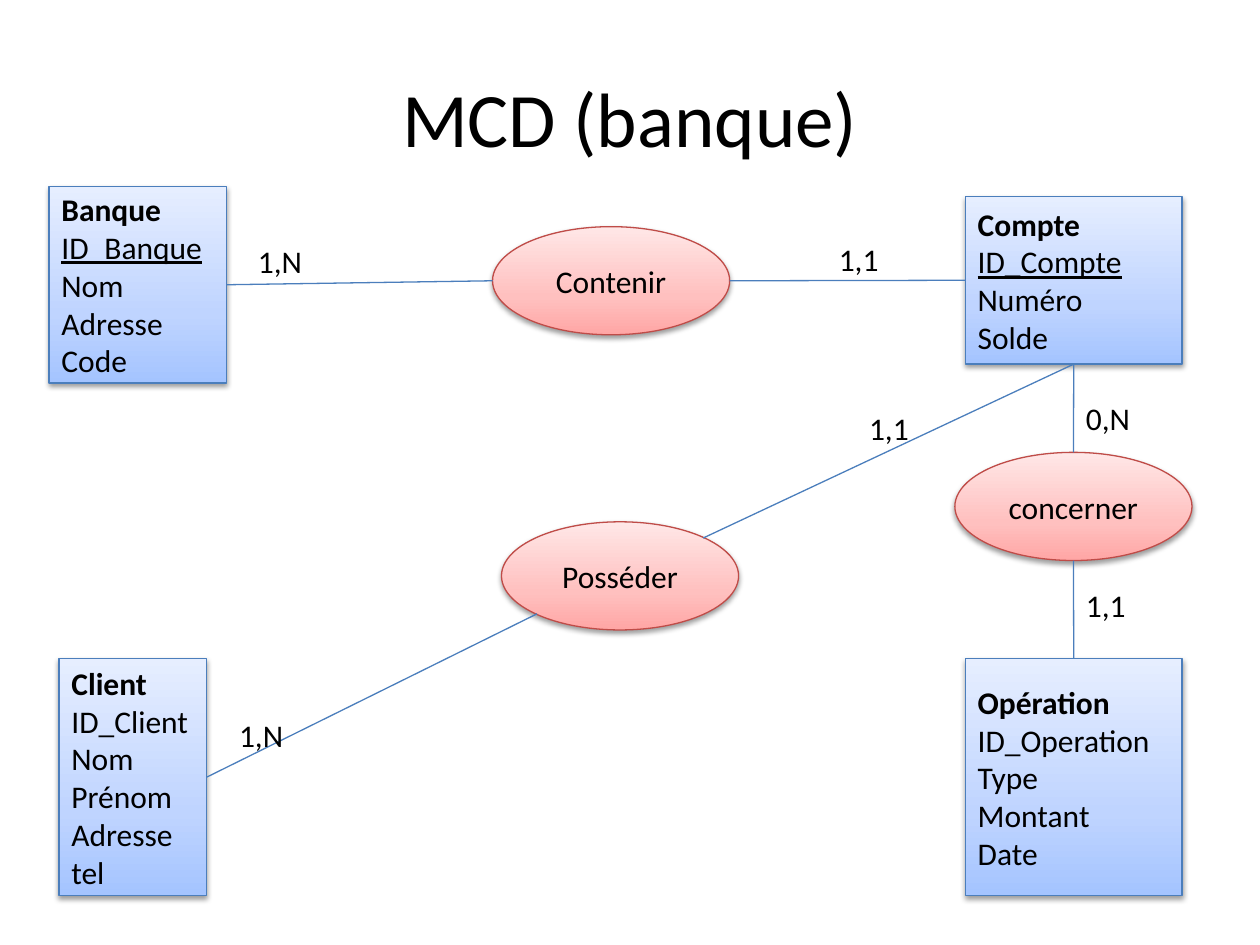
from copy import deepcopy
from lxml.etree import SubElement
from pptx import Presentation
from pptx.dml.color import RGBColor
from pptx.enum.shapes import MSO_CONNECTOR, MSO_SHAPE
from pptx.enum.text import MSO_ANCHOR, MSO_AUTO_SIZE, PP_ALIGN
from pptx.oxml.ns import qn
from pptx.util import Cm, Pt

COLORS = {
    "text": "000000",
    "entity_line": "4B7EBC",
    "association_line": "BF4C48",
}
GRADIENTS = {
    "entity": {0: "A4C4FF", 0.35: "BFD4FF", 1: "E6EEFF"},
    "association": {0: "FFA6A5", 0.35: "FFC0BF", 1: "FFE7E7"},
}
DIAGONAL = 0.35
SITES = {
    "top": (0.5, 0),
    "bottom": (0.5, 1),
    "left": (0, 0.5),
    "right": (1, 0.5),
    "upper right": (0.5 + DIAGONAL, 0.5 - DIAGONAL),
    "lower left": (0.5 - DIAGONAL, 0.5 + DIAGONAL),
}


def apply(target, values):
    for name, value in values.items():
        setattr(target, name, value)


def site(node, side):
    across, down = SITES[side]
    return int(node.left + node.width * across), int(node.top + node.height * down)


class DataModelSlide:
    body = {"name": "Calibri", "size": Pt(18)}
    heading = {"name": "Calibri", "size": Pt(44)}
    line_width = Pt(0.75)

    def __init__(self, deck):
        self.shapes = deck.slides.add_slide(deck.slide_layouts[6]).shapes

    def add_rows(self, holder, rows, style, align=PP_ALIGN.LEFT, **frame_format):
        frame = holder.text_frame
        apply(frame, {"word_wrap": True, **frame_format})
        for index, (words, emphasis) in enumerate(rows):
            paragraph = frame.paragraphs[0] if index == 0 else frame.add_paragraph()
            paragraph.alignment = align
            run = paragraph.add_run()
            run.text = words
            apply(run.font, {**style, **emphasis})
            run.font.color.rgb = RGBColor.from_string(COLORS["text"])

    def outline(self, element, color):
        element.line.color.rgb = RGBColor.from_string(COLORS[color])
        element.line.width = self.line_width

    def node(self, preset, kind, box, rows, align):
        node = self.shapes.add_shape(preset, *map(Cm, box))
        node.fill.gradient()
        node.fill.gradient_angle = 90
        properties = node._element.spPr
        stops = properties.find(".//" + qn("a:gsLst"))
        stops.append(deepcopy(stops[-1]))
        for stop, (position, color) in zip(node.fill.gradient_stops, GRADIENTS[kind].items()):
            stop.position = position
            stop.color.rgb = RGBColor.from_string(color)
        self.outline(node, kind + "_line")
        node.shadow.inherit = False
        shadow = SubElement(
            properties.find(qn("a:effectLst")), qn("a:outerShdw"),
            blurRad=str(Pt(3.1)), dist=str(Pt(1.6)), dir="5400000", rotWithShape="0",
        )
        shade = SubElement(shadow, qn("a:srgbClr"), val=COLORS["text"])
        SubElement(shade, qn("a:alpha"), val="38000")
        self.add_rows(node, rows, self.body, align, vertical_anchor=MSO_ANCHOR.MIDDLE)
        return node

    def entity(self, box, name, key, *fields, underlined=False):
        rows = [(name, {"bold": True}), (key, {"underline": underlined})]
        rows += [(field, {}) for field in fields]
        return self.node(MSO_SHAPE.RECTANGLE, "entity", box, rows, PP_ALIGN.LEFT)

    def association(self, left, top, name):
        box = (left, top, 4.78, 2.18)
        return self.node(MSO_SHAPE.OVAL, "association", box, [(name, {})], PP_ALIGN.CENTER)

    def link(self, start, start_side, end, end_side):
        link = self.shapes.add_connector(
            MSO_CONNECTOR.STRAIGHT, *site(start, start_side), *site(end, end_side)
        )
        self.outline(link, "entity_line")
        SubElement(link._element.spPr, qn("a:effectLst"))

    def cardinality(self, left, top, width, words, wrap):
        label = self.shapes.add_textbox(*map(Cm, (left, top, width, 1.02)))
        self.add_rows(label, [(words, {})], self.body,
                      word_wrap=wrap, auto_size=MSO_AUTO_SIZE.SHAPE_TO_FIT_TEXT)

    def title(self, words):
        title = self.shapes.add_textbox(Cm(1.27), Cm(0.76), Cm(22.86), Cm(3.18))
        self.add_rows(title, [(words, {})], self.heading, PP_ALIGN.CENTER,
                      vertical_anchor=MSO_ANCHOR.MIDDLE)


def main():
    deck = Presentation()
    apply(deck, {"slide_width": Cm(25.4), "slide_height": Cm(19.05)})
    model = DataModelSlide(deck)
    model.title("MCD (banque)")

    banque = model.entity((0.99, 3.76, 3.58, 3.96), "Banque", "ID_Banque",
                          "Nom", "Adresse", "Code", underlined=True)
    compte = model.entity((19.46, 3.96, 4.37, 3.38), "Compte", "ID_Compte",
                          "Numéro", "Solde", underlined=True)
    client = model.entity((1.19, 13.28, 2.97, 4.78), "Client", "ID_Client",
                          "Nom", "Prénom", "Adresse", "tel")
    operation = model.entity((19.46, 13.28, 4.37, 4.78), "Opération", "ID_Operation",
                             "Type", "Montant", "Date")

    contenir = model.association(9.93, 4.57, "Contenir")
    posseder = model.association(10.11, 10.52, "Posséder")
    concerner = model.association(19.25, 9.12, "concerner")

    for ends in (
        (banque, "right", contenir, "left"),
        (contenir, "right", compte, "left"),
        (compte, "bottom", concerner, "top"),
        (concerner, "bottom", operation, "top"),
        (posseder, "upper right", compte, "bottom"),
        (posseder, "lower left", client, "right"),
    ):
        model.link(*ends)

    for cardinality in (
        (4.95, 4.75, 1.42, "1,N", False),
        (16.66, 4.72, 1.32, "1,1", False),
        (4.57, 14.3, 1.42, "1,N", False),
        (17.27, 8.13, 1.98, "1,1", True),
        (21.64, 7.92, 1.98, "0,N", True),
        (21.64, 11.68, 1.98, "1,1", True),
    ):
        model.cardinality(*cardinality)

    deck.save("out.pptx")


if __name__ == "__main__":
    main()
